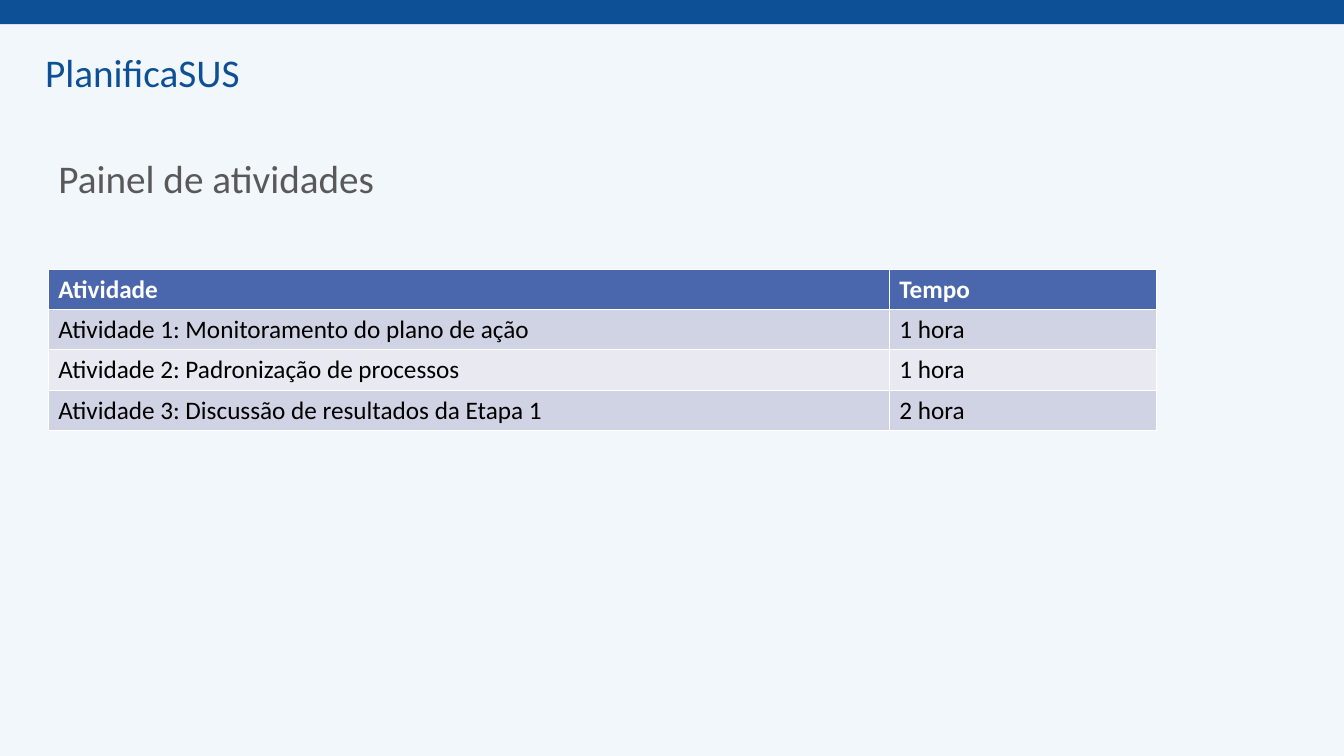
"""Build the activity panel slide with its timetable."""
from pptx import Presentation
from pptx.dml.color import RGBColor
from pptx.enum.shapes import MSO_SHAPE
from pptx.enum.text import MSO_ANCHOR, MSO_AUTO_SIZE, PP_ALIGN
from pptx.util import Inches, Pt

RECTANGLE = MSO_SHAPE.RECTANGLE
MIDDLE = MSO_ANCHOR.MIDDLE
LEFT = PP_ALIGN.LEFT
NO_AUTOFIT = MSO_AUTO_SIZE.NONE
BACKGROUND = RGBColor(0xF2, 0xF7, 0xFB)
BLUE = RGBColor(0x0D, 0x50, 0x95)
GRAY = RGBColor(0x59, 0x59, 0x59)
HEADER = RGBColor(0x4A, 0x66, 0xAC)
BANDS = [RGBColor(0xE9, 0xEA, 0xF1), RGBColor(0xD0, 0xD3, 0xE3)]
WHITE = RGBColor(0xFF, 0xFF, 0xFF)
BLACK = RGBColor(0x00, 0x00, 0x00)

MARGIN, CONTENT_WIDTH = Inches(0.48), Inches(10.99)
ROW_HEIGHT = Inches(0.4)
COLUMN_WIDTHS = [Inches(8.34), Inches(2.65)]
ACTIVITIES = [
    ("Atividade", "Tempo"),
    ("Atividade 1: Monitoramento do plano de ação", "1 hora"),
    ("Atividade 2: Padronização de processos", "1 hora"),
    ("Atividade 3: Discussão de resultados da Etapa 1", "2 hora"),
]


def format_text(tf, size, color, bold=False):
    for p in tf.paragraphs:
        for r in p.runs:
            r.font.name = "Calibri"
            r.font.size = Pt(size)
            r.font.bold = bold
            r.font.color.rgb = color


prs = Presentation()
prs.slide_width, prs.slide_height = Inches(13.33), Inches(7.5)
s = prs.slides.add_slide(prs.slide_layouts[5])
s.background.fill.solid()
s.background.fill.fore_color.rgb = BACKGROUND

bar = s.shapes.add_shape(RECTANGLE, 0, 0, prs.slide_width, Inches(0.24))
bar.shadow.inherit = False
bar.fill.solid()
bar.fill.fore_color.rgb = BLUE
bar.line.fill.background()

program = s.shapes.add_textbox(Inches(0.35), Inches(0.43), Inches(2.15), Inches(0.57))
program.text_frame.word_wrap = False
program.text_frame.text = "PlanificaSUS"
format_text(program.text_frame, 28, BLUE)

title = s.shapes.title
title.left, title.top = MARGIN, Inches(1.07)
title.width, title.height = CONTENT_WIDTH, Inches(1.45)
tf = title.text_frame
tf.text = "Painel de atividades"
tf.auto_size = NO_AUTOFIT
tf.vertical_anchor = MIDDLE
tf.paragraphs[0].alignment = LEFT
tf.paragraphs[0].line_spacing = 0.9
format_text(tf, 28, GRAY)

table = s.shapes.add_table(
    len(ACTIVITIES), len(COLUMN_WIDTHS), MARGIN, Inches(2.67),
    CONTENT_WIDTH, ROW_HEIGHT * len(ACTIVITIES)).table
for column, width in zip(table.columns, COLUMN_WIDTHS):
    column.width = width
for i, activity in enumerate(ACTIVITIES):
    is_header = i == 0
    for j, text in enumerate(activity):
        cell = table.cell(i, j)
        cell.text_frame.text = text
        cell.fill.solid()
        cell.fill.fore_color.rgb = HEADER if is_header else BANDS[i % 2]
        format_text(cell.text_frame, 18, WHITE if is_header else BLACK, is_header)

prs.save("out.pptx")
